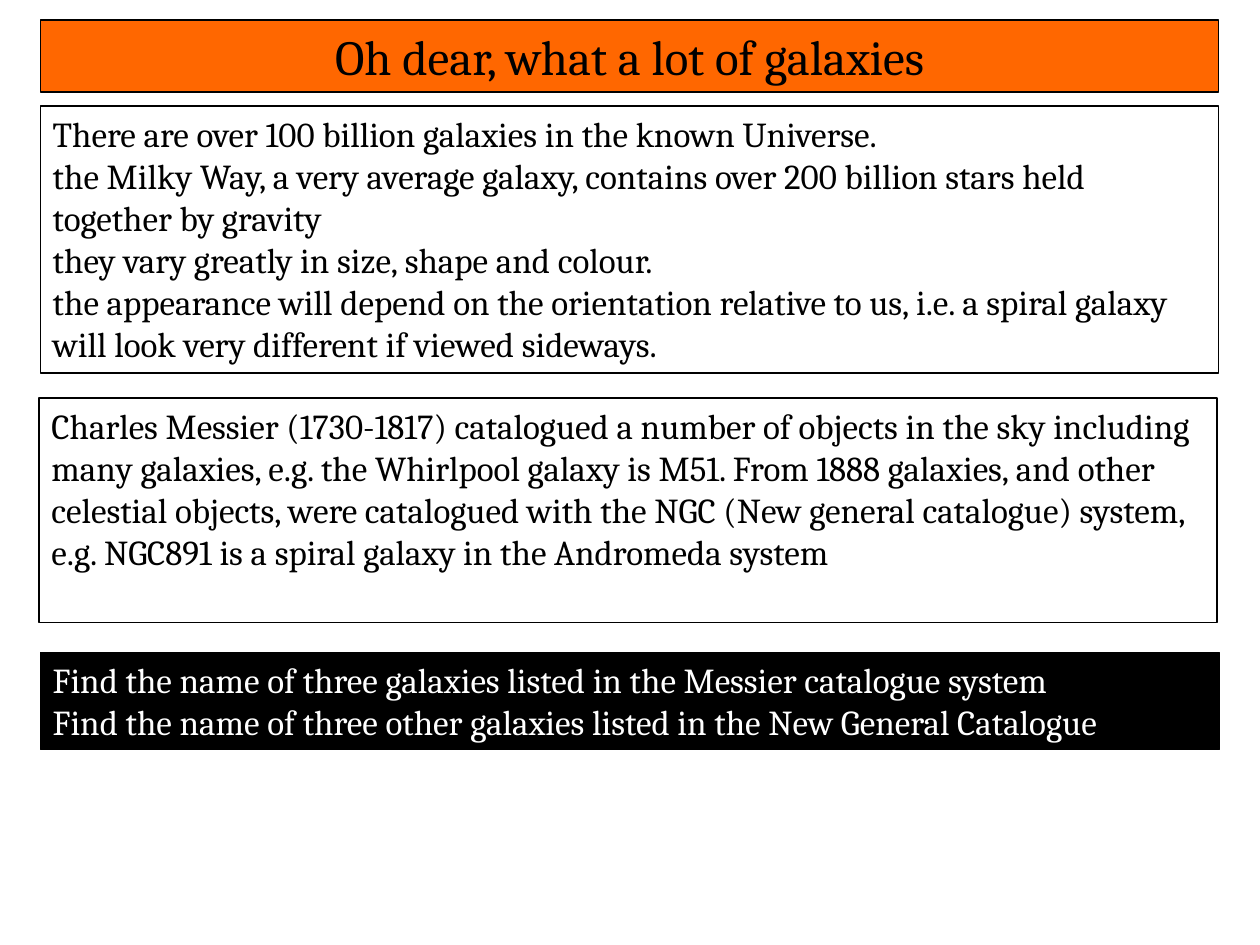
from pptx import Presentation
from pptx.dml.color import RGBColor
from pptx.enum.shapes import MSO_SHAPE as Shape
from pptx.enum.text import MSO_ANCHOR as Anchor, PP_ALIGN as Align
from pptx.util import Inches, Pt

BLACK = RGBColor(0x00, 0x00, 0x00)
WHITE = RGBColor(0xFF, 0xFF, 0xFF)
ORANGE = RGBColor(0xFF, 0x67, 0x00)

COLUMNS, ROWS = 100, 75
LEFT, WIDTH = 3.2, 93.5

FACTS = [
    "There are over 100 billion galaxies in the known Universe.",
    "the Milky Way, a very average galaxy, contains over 200 billion stars "
    "held together by gravity",
    "they vary greatly in size, shape and colour.",
    "the appearance will depend on the orientation relative to us, i.e. a "
    "spiral galaxy will look very different if viewed sideways.",
]
CATALOGUES = [
    "Charles Messier (1730-1817) catalogued a number of objects in the sky "
    "including many galaxies, e.g. the Whirlpool galaxy is M51. From 1888 "
    "galaxies, and other celestial objects, were catalogued with the NGC "
    "(New general catalogue) system, e.g. NGC891 is a spiral galaxy in the "
    "Andromeda system",
]
TASKS = [
    "Find the name of three galaxies listed in the Messier catalogue system",
    "Find the name of three other galaxies listed in the New General Catalogue",
]


class GalaxySlide:
    """Holds the style and the current slide; places are in grid units."""

    font_name = "Cambria"
    line_width = Pt(0.85)

    def __init__(self, presentation):
        self.column = presentation.slide_width / COLUMNS
        self.row = presentation.slide_height / ROWS
        self.slide = presentation.slides.add_slide(presentation.slide_layouts[6])

    def panel(self, top, height, lines, left=LEFT, width=WIDTH, fill=WHITE,
              color=BLACK, size=20, align=Align.LEFT):
        """Add a bordered box with one paragraph for each line."""
        shape = self.slide.shapes.add_shape(
            Shape.RECTANGLE, round(left * self.column), round(top * self.row),
            round(width * self.column), round(height * self.row))
        shape.shadow.inherit = False
        shape.fill.solid()
        shape.fill.fore_color.rgb = fill
        shape.line.color.rgb = BLACK
        shape.line.width = self.line_width

        frame = shape.text_frame
        frame.word_wrap = True
        frame.vertical_anchor = Anchor.TOP
        frame.text = "\n".join(lines)
        font_format = {"name": self.font_name, "size": Pt(size)}
        for paragraph in frame.paragraphs:
            paragraph.alignment = align
            font = paragraph.runs[0].font
            for name, value in font_format.items():
                setattr(font, name, value)
            font.color.rgb = color


def main():
    presentation = Presentation()
    presentation.slide_width = Inches(10)
    presentation.slide_height = Inches(7.5)

    slide = GalaxySlide(presentation)
    slide.panel(1.6, 5.7, ["Oh dear, what a lot of galaxies"],
                fill=ORANGE, size=28, align=Align.CENTER)
    slide.panel(8.4, 21.2, FACTS)
    slide.panel(31.6, 17.8, CATALOGUES, left=3.1)
    slide.panel(51.8, 7.7, TASKS, width=93.6, fill=BLACK, color=WHITE)

    presentation.save("out.pptx")


if __name__ == "__main__":
    main()
